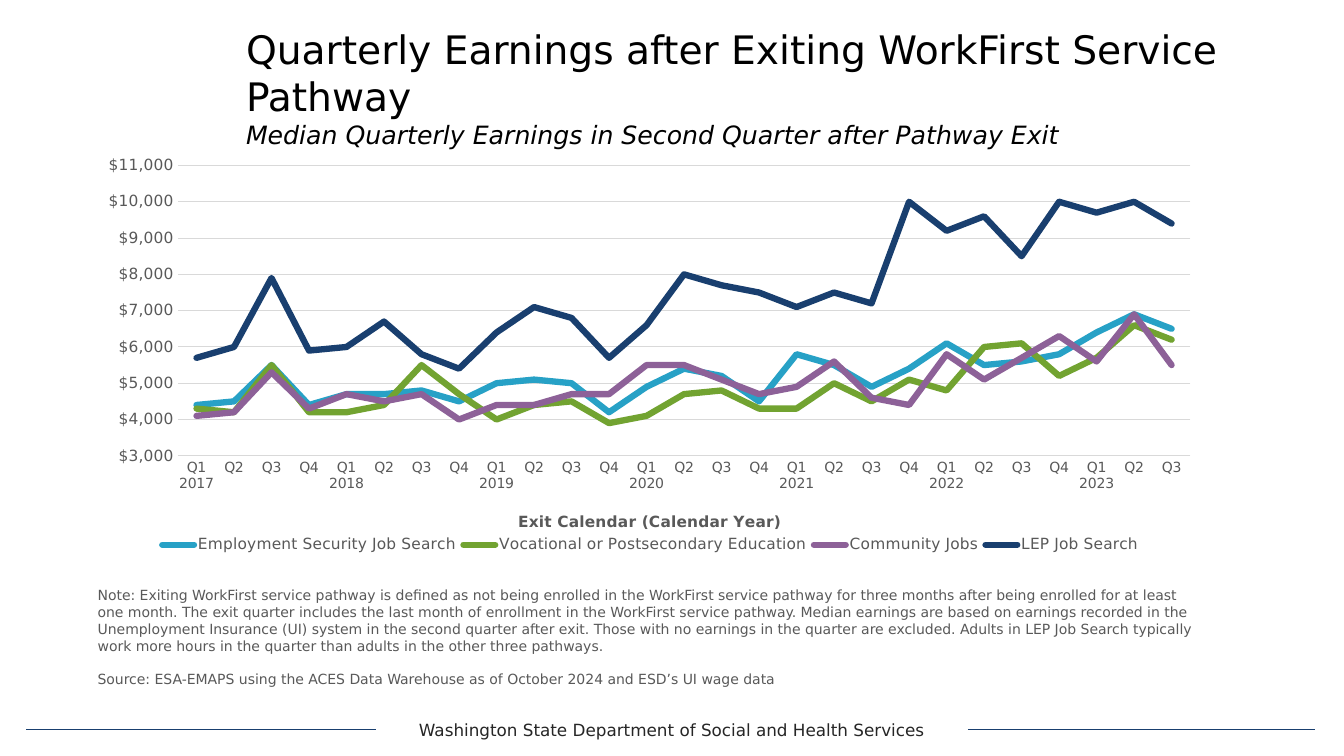
from dataclasses import dataclass

from lxml import etree
from pptx import Presentation
from pptx import util as u
from pptx.chart.data import CategoryChartData
from pptx.dml.color import RGBColor
from pptx.enum import chart as ch, shapes, text
from pptx.oxml.ns import qn


@dataclass(frozen=True)
class Theme:
    font: str = "DejaVu Sans"
    black: str = "000000"
    dark: str = "262626"
    grey: str = "595959"
    grid: str = "D9D9D9"
    navy: str = "193F6F"
    teal: str = "27A1C6"
    green: str = "72A331"
    plum: str = "8D6198"
    head: float = 28
    sub: float = 18
    foot: float = 12
    label: float = 11
    note: float = 10
    hair: float = 0.75
    thick: float = 4.5


T = Theme()

TITLE = "Quarterly Earnings after Exiting WorkFirst Service Pathway"
SUB = "Median Quarterly Earnings in Second Quarter after Pathway Exit"
FOOT = "Washington State Department of Social and Health Services"
AXIS = "Exit Calendar (Calendar Year)"
NOTES = [
    "Note: Exiting WorkFirst service pathway is defined as not being enrolled in the "
    "WorkFirst service pathway for three months after being enrolled for at least one "
    "month. The exit quarter includes the last month of enrollment in the WorkFirst "
    "service pathway. Median earnings are based on earnings recorded in the Unemployment "
    "Insurance (UI) system in the second quarter after exit. Those with no earnings in "
    "the quarter are excluded. Adults in LEP Job Search typically work more hours in the "
    "quarter than adults in the other three pathways.",
    "Source: ESA-EMAPS using the ACES Data Warehouse as of October 2024 and ESD’s UI "
    "wage data",
]

FIRST_YEAR = 2017
# Earnings in hundreds of dollars, one value a quarter
PATHS = [
    ("Employment Security Job Search", T.teal,
     [44, 45, 55, 44, 47, 47, 48, 45, 50, 51, 50, 42, 49, 54, 52, 45, 58, 55, 49, 54,
      61, 55, 56, 58, 64, 69, 65]),
    ("Vocational or Postsecondary Education", T.green,
     [43, 42, 55, 42, 42, 44, 55, 47, 40, 44, 45, 39, 41, 47, 48, 43, 43, 50, 45, 51,
      48, 60, 61, 52, 57, 66, 62]),
    ("Community Jobs", T.plum,
     [41, 42, 53, 43, 47, 45, 47, 40, 44, 44, 47, 47, 55, 55, 51, 47, 49, 56, 46, 44,
      58, 51, 57, 63, 56, 69, 55]),
    ("LEP Job Search", T.navy,
     [57, 60, 79, 59, 60, 67, 58, 54, 64, 71, 68, 57, 66, 80, 77, 75, 71, 75, 72, 100,
      92, 96, 85, 100, 97, 100, 94]),
]


def box(left, top, width, height):
    return [u.Inches(n) for n in (left, top, width, height)]


def style(font, size, color, bold=False, italic=False):
    font.name, font.size = T.font, u.Pt(size)
    font.bold, font.italic = bold, italic
    font.color.rgb = RGBColor.from_string(color)


def stroke(line, color, width):
    line.color.rgb = RGBColor.from_string(color)
    line.width = u.Pt(width)


def add_run(para, words, size, color, **kind):
    run = para.add_run()
    run.text = words
    style(run.font, size, color, **kind)


def add_title(slide):
    title = slide.shapes.title
    title.left, title.top, title.width, title.height = box(2.34, 0.14, 10.33, 1.45)
    frame = title.text_frame
    frame.auto_size = text.MSO_AUTO_SIZE.NONE
    frame.vertical_anchor = text.MSO_ANCHOR.MIDDLE
    para = frame.paragraphs[0]
    para.alignment = text.PP_ALIGN.LEFT
    add_run(para, TITLE, T.head, T.black)
    para.add_line_break()
    add_run(para, SUB, T.sub, T.black, italic=True)


def add_text(slide, place, lines, size, color, align=text.PP_ALIGN.LEFT, gap=0):
    shape = slide.shapes.add_textbox(*box(*place))
    frame = shape.text_frame
    frame.word_wrap = True
    for i, words in enumerate(lines):
        para = frame.add_paragraph() if i else frame.paragraphs[0]
        para.alignment = align
        if i:
            para.space_before = u.Pt(gap)
        add_run(para, words, size, color)
    return shape


def add_rule(slide, start, end):
    y = u.Inches(7.24)
    rule = slide.shapes.add_connector(
        shapes.MSO_CONNECTOR.STRAIGHT, u.Inches(start), y, u.Inches(end), y)
    stroke(rule.line, T.navy, T.hair)
    etree.SubElement(rule._element.spPr, qn("a:effectLst"))
    return rule


def add_footer(slide):
    label = add_text(slide, (3.73, 7.09, 5.87, 0.3), [FOOT], T.foot, T.dark,
                     text.PP_ALIGN.CENTER)
    add_rule(slide, 0.26, 3.73).end_connect(label, 1)
    add_rule(slide, 9.6, 13.04).begin_connect(label, 3)


def set_layout(part, index, **sides):
    """Place a chart part by fractions of the chart's size."""
    for old in part.findall(qn("c:layout")):
        part.remove(old)
    layout = etree.Element(qn("c:layout"))
    manual = etree.SubElement(layout, qn("c:manualLayout"))
    if part.tag == qn("c:plotArea"):
        etree.SubElement(manual, qn("c:layoutTarget")).set("val", "inner")
    for side in "xy":
        etree.SubElement(manual, qn(f"c:{side}Mode")).set("val", "edge")
    for side, share in sides.items():
        etree.SubElement(manual, qn(f"c:{side}")).set("val", str(share))
    part.insert(index, layout)


def format_axes(chart):
    cat, val = chart.category_axis, chart.value_axis
    for axis, size in ((cat, T.note), (val, T.label)):
        axis.major_tick_mark = axis.minor_tick_mark = ch.XL_TICK_MARK.NONE
        style(axis.tick_labels.font, size, T.grey)
    stroke(cat.format.line, T.grid, T.hair)
    add_run(cat.axis_title.text_frame.paragraphs[0], AXIS, T.label, T.grey, bold=True)
    set_layout(cat.axis_title._element, 1, x=0.38, y=0.83)
    val.minimum_scale, val.maximum_scale, val.major_unit = 3000, 11000, 1000
    val.tick_labels.number_format = '"$"#,##0'
    val.tick_labels.number_format_is_linked = False
    val.format.line.fill.background()
    stroke(val.major_gridlines.format.line, T.grid, T.hair)


def add_chart(slide):
    data = CategoryChartData(number_format='"$"#,##0')
    data.categories = [
        f"Q{i % 4 + 1}" + ("" if i % 4 else f"\n{FIRST_YEAR + i // 4}")
        for i in range(len(PATHS[0][2]))]
    for name, _, vals in PATHS:
        data.add_series(name, [v * 100 for v in vals])
    chart = slide.shapes.add_chart(
        ch.XL_CHART_TYPE.LINE, *box(0.87, 1.47, 11.16, 4.3), data).chart
    style(chart.font, T.note, T.black)
    chart.has_title = False
    plot = chart.plots[0]
    plot.vary_by_categories = False
    for series, (_, color, _) in zip(plot.series, PATHS):
        series.smooth = False
        stroke(series.format.line, color, T.thick)
        for line in series._element.iter(qn("a:ln")):
            line.set("cap", "rnd")
    format_axes(chart)
    chart.has_legend = True
    legend = chart.legend
    legend.position = ch.XL_LEGEND_POSITION.BOTTOM
    legend.include_in_layout = False
    style(legend.font, T.label, T.grey)
    set_layout(legend._element, 1, x=0.06, y=0.88, w=0.88, h=0.07)
    area = next(chart._chartSpace.iter(qn("c:plotArea")))
    set_layout(area, 0, x=0.08, y=0.04, w=0.9, h=0.67)


def main():
    deck = Presentation()
    deck.slide_width, deck.slide_height = u.Inches(13.33), u.Inches(7.5)
    slide = deck.slides.add_slide(deck.slide_layouts[5])
    add_footer(slide)
    add_title(slide)
    add_chart(slide)
    add_text(slide, (0.87, 5.77, 11.16, 1.11), NOTES, T.note, T.grey, gap=12)
    deck.save("out.pptx")


if __name__ == "__main__":
    main()
